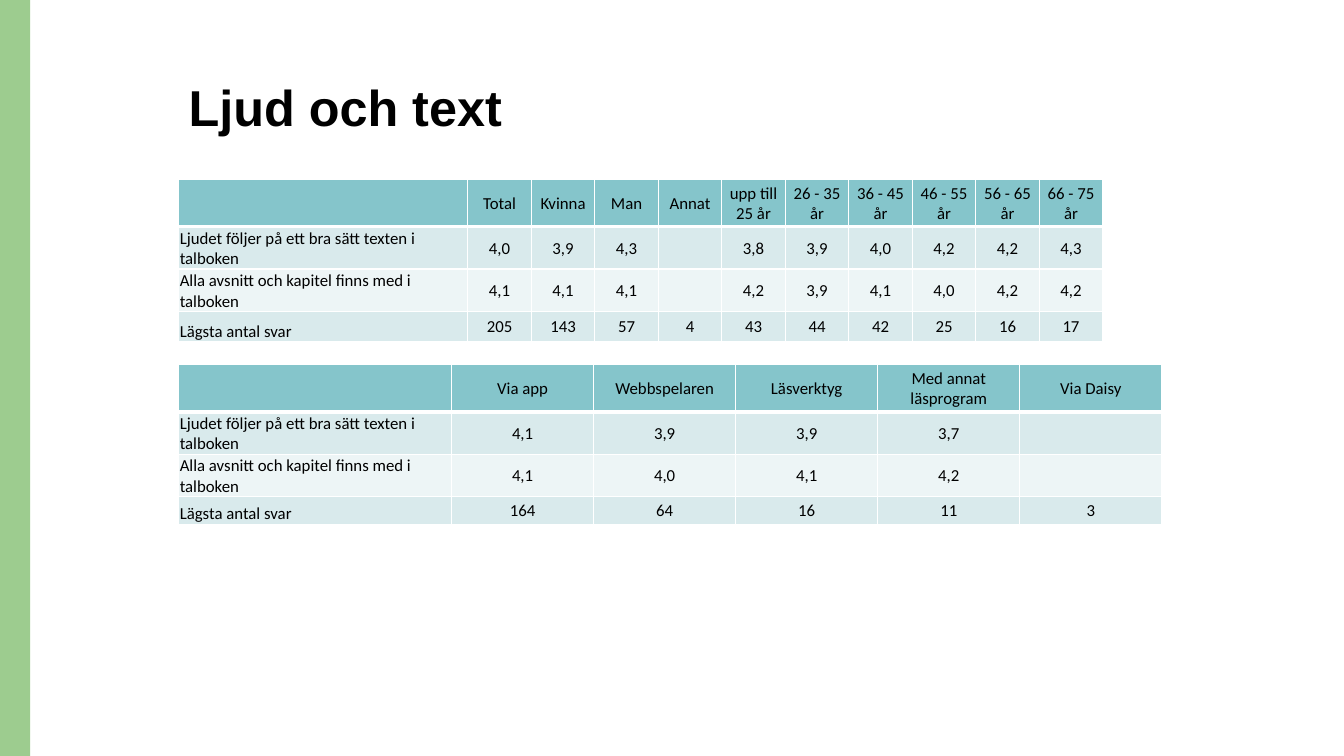
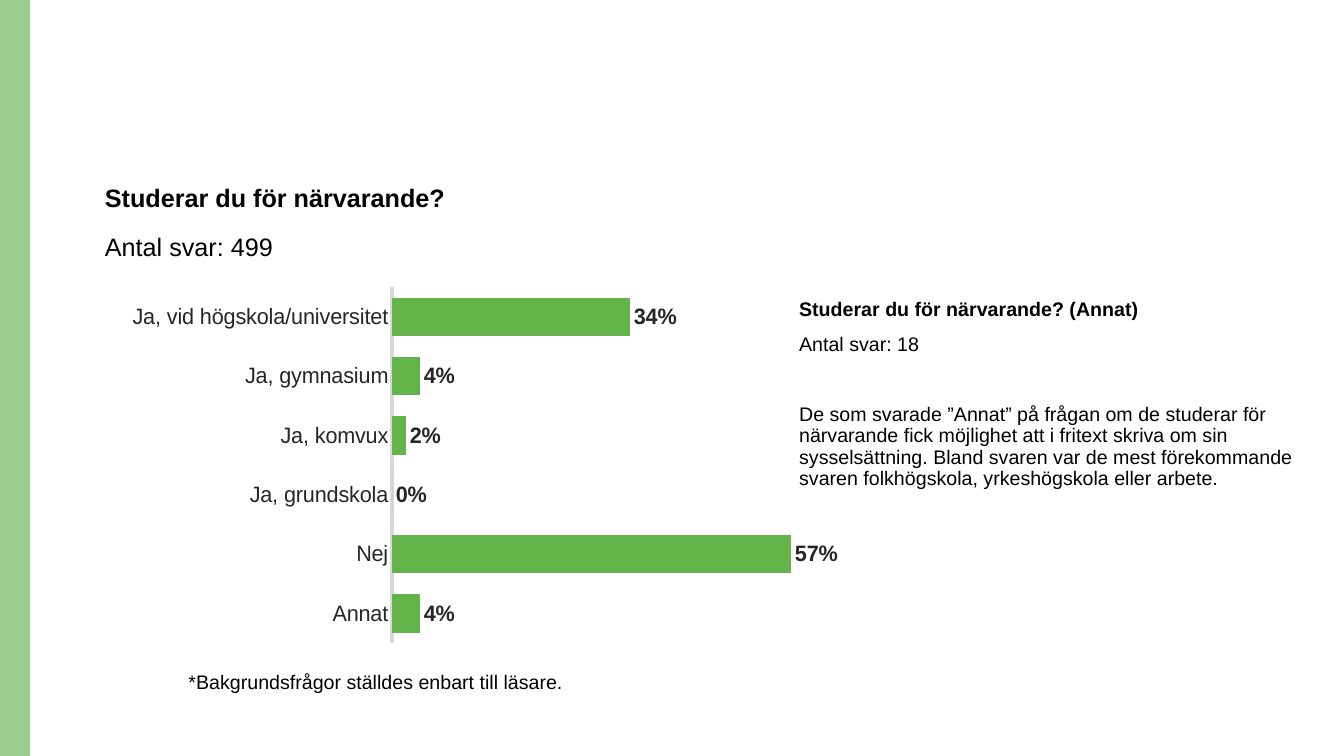
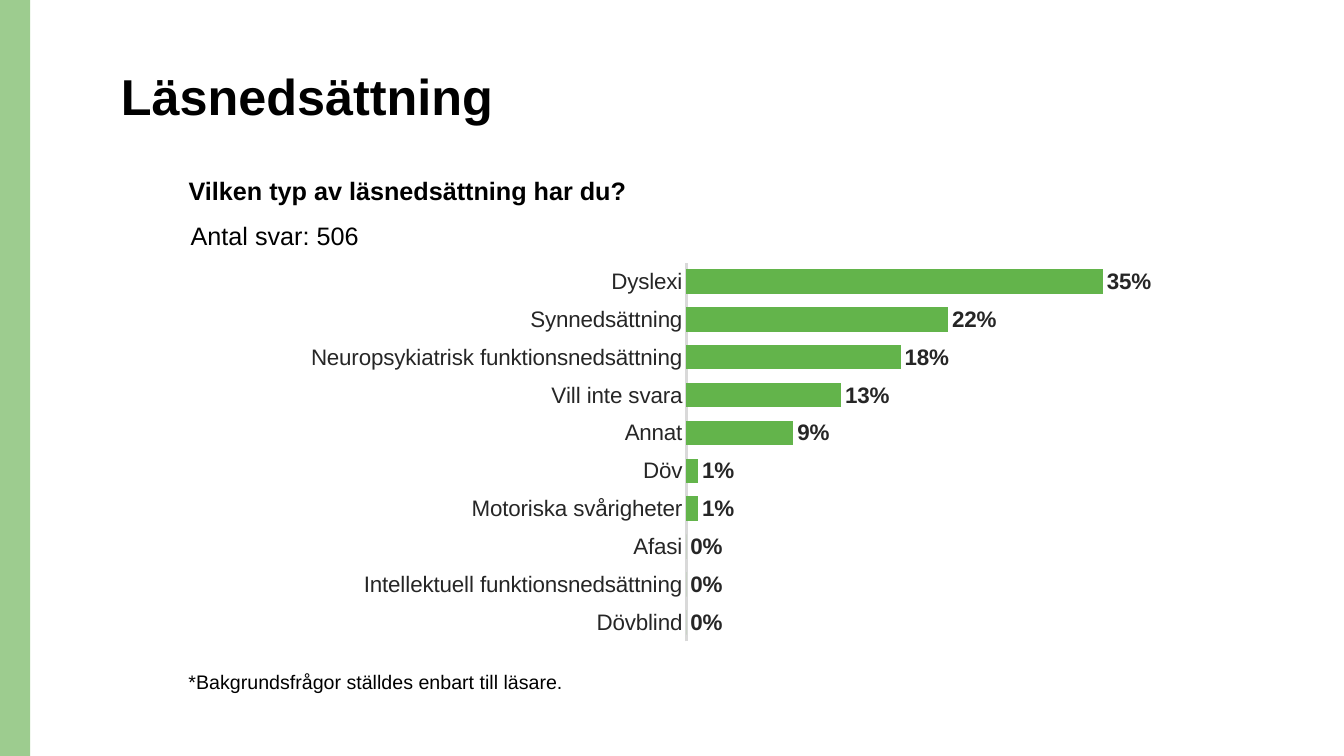
from dataclasses import dataclass

from lxml import etree
from pptx import Presentation
from pptx.chart.data import CategoryChartData
from pptx.dml.color import RGBColor
from pptx.enum.chart import XL_CHART_TYPE, XL_LABEL_POSITION, XL_TICK_MARK
from pptx.enum.shapes import MSO_SHAPE
from pptx.enum.text import MSO_ANCHOR, MSO_AUTO_SIZE, PP_ALIGN
from pptx.oxml import parse_xml
from pptx.oxml.ns import nsdecls, qn
from pptx.util import Cm, Pt

LEFT, CENTER = PP_ALIGN.LEFT, PP_ALIGN.CENTER
TOP, MIDDLE, BOTTOM = MSO_ANCHOR.TOP, MSO_ANCHOR.MIDDLE, MSO_ANCHOR.BOTTOM
BAR_CLUSTERED = XL_CHART_TYPE.BAR_CLUSTERED
OUTSIDE_END = XL_LABEL_POSITION.OUTSIDE_END
NO_TICK = XL_TICK_MARK.NONE
TITLE_ONLY, TWO_CONTENT = 5, 3


@dataclass(frozen=True)
class Theme:
    text: RGBColor = RGBColor(0x00, 0x00, 0x00)
    chart_text: RGBColor = RGBColor(0x26, 0x26, 0x26)
    band: RGBColor = RGBColor(0x9D, 0xCC, 0x8F)
    bar: RGBColor = RGBColor(0x63, 0xB4, 0x4B)
    axis: RGBColor = RGBColor(0xD9, 0xD9, 0xD9)
    header_row: RGBColor = RGBColor(0x85, 0xC5, 0xCB)
    odd_row: RGBColor = RGBColor(0xD9, 0xEA, 0xEC)
    even_row: RGBColor = RGBColor(0xED, 0xF5, 0xF6)
    cell_border: str = "FFFFFF"
    font: str = "Arial"
    table_font: str = "Calibri"
    title_size: Pt = Pt(36)
    body_size: Pt = Pt(18)
    chart_size: Pt = Pt(16)
    note_size: Pt = Pt(14)
    table_size: Pt = Pt(12)


THEME = Theme()
TITLE = {"name": THEME.font, "size": THEME.title_size, "bold": True}
QUESTION = {"name": THEME.font, "size": THEME.body_size, "bold": True}
ANSWERS = {**QUESTION, "bold": False}
NOTE = {"name": THEME.font, "size": THEME.note_size, "bold": False}
NOTE_HEADING = {**NOTE, "bold": True}
CELL = {"name": THEME.table_font, "size": THEME.table_size, "bold": False}
CHART_TEXT = {"name": THEME.font, "size": THEME.chart_size, "bold": False}
VALUE_LABEL = {**CHART_TEXT, "bold": True}


def set_font(font, style, color=THEME.text):
    for attribute, value in style.items():
        setattr(font, attribute, value)
    font.color.rgb = color


def write_text(shape, box, lines, anchor=TOP, line_spacing=0.9):
    """Place the shape; each line is (text, style, points of space before)."""
    for attribute, value in zip(("left", "top", "width", "height"), box):
        setattr(shape, attribute, Cm(value))
    frame = shape.text_frame
    frame.word_wrap = True
    frame.auto_size = MSO_AUTO_SIZE.NONE
    frame.vertical_anchor = anchor
    for index, (text, style, space_before) in enumerate(lines):
        paragraph = frame.add_paragraph() if index else frame.paragraphs[0]
        paragraph.alignment = LEFT
        paragraph.line_spacing = line_spacing
        paragraph.space_before = Pt(space_before)
        run = paragraph.add_run()
        run.text = text
        set_font(run.font, style)


presentation = Presentation()
presentation.slide_width = Cm(33.87)
presentation.slide_height = Cm(19.05)
master = presentation.slide_master

# Body text in the master has no bullet and no indent
body_level = master.element.find(".//" + qn("p:bodyStyle") + "/" + qn("a:lvl1pPr"))
body_level.set("marL", "0")
body_level.set("indent", "0")
bullet = body_level.find(qn("a:buChar"))
body_level.replace(bullet, etree.Element(qn("a:buNone")))

table_slide = presentation.slides.add_slide(presentation.slide_layouts[TITLE_ONLY])

# The green band is drawn once and moved to the master
band = table_slide.shapes.add_shape(
    MSO_SHAPE.RECTANGLE, 0, 0, Cm(0.76), presentation.slide_height)
band.shadow.inherit = False
band.fill.solid()
band.fill.fore_color.rgb = THEME.band
band.line.fill.background()
master.shapes.element.insert(2, band.element)

# Slide 1: two tables
write_text(table_slide.shapes.title, (4.5, 1.07, 30.35, 2.51),
           [("Ljud och text", TITLE, 0)], BOTTOM)

SOUND = "Ljudet följer på ett bra sätt texten i talboken"
CHAPTERS = "Alla avsnitt och kapitel finns med i talboken"
LOWEST = "Lägsta antal svar"
TABLES = [
    {"top": 4.52, "label_width": 7.29, "value_width": 1.6, "last_height": 0.76,
     "rows": [
         ["", "Total", "Kvinna", "Man", "Annat", "upp till 25 år", "26 - 35 år",
          "36 - 45 år", "46 - 55 år", "56 - 65 år", "66 - 75 år"],
         [SOUND, "4,0", "3,9", "4,3", "", "3,8", "3,9", "4,0", "4,2", "4,2", "4,3"],
         [CHAPTERS, "4,1", "4,1", "4,1", "", "4,2", "3,9", "4,1", "4,0", "4,2", "4,2"],
         [LOWEST, "205", "143", "57", "4", "43", "44", "42", "25", "16", "17"],
     ]},
    {"top": 9.19, "label_width": 6.88, "value_width": 3.58, "last_height": 0.69,
     "rows": [
         ["", "Via app", "Webbspelaren", "Läsverktyg", "Med annat läsprogram",
          "Via Daisy"],
         [SOUND, "4,1", "3,9", "3,9", "3,7", ""],
         [CHAPTERS, "4,1", "4,0", "4,1", "4,2", ""],
         [LOWEST, "164", "64", "16", "11", "3"],
     ]},
]
ROW_FILLS = [THEME.header_row, THEME.odd_row, THEME.even_row, THEME.odd_row]
CELL_MARGINS = {"margin_left": Cm(0.03), "margin_right": Cm(0.03),
                "margin_top": Cm(0.03), "margin_bottom": 0}

for content in TABLES:
    rows = content["rows"]
    widths = [content["label_width"]] + [content["value_width"]] * (len(rows[0]) - 1)
    heights = [1.19, 1.07, 1.07, content["last_height"]]
    table = table_slide.shapes.add_table(
        len(rows), len(widths), Cm(4.5), Cm(content["top"]),
        Cm(sum(widths)), Cm(sum(heights))).table
    for column, width in zip(table.columns, widths):
        column.width = Cm(width)
    for row, height in zip(table.rows, heights):
        row.height = Cm(height)
    for row_index, texts in enumerate(rows):
        for column_index, text in enumerate(texts):
            cell = table.cell(row_index, column_index)
            for attribute, value in CELL_MARGINS.items():
                setattr(cell, attribute, value)
            is_label = column_index == 0
            cell.vertical_anchor = BOTTOM if is_label else MIDDLE
            if text:
                paragraph = cell.text_frame.paragraphs[0]
                paragraph.alignment = LEFT if is_label else CENTER
                run = paragraph.add_run()
                run.text = text
                set_font(run.font, CELL)
            properties = cell._tc.get_or_add_tcPr()
            for side in ("lnL", "lnR", "lnT", "lnB"):
                header_edge = (row_index, side) in ((0, "lnB"), (1, "lnT"))
                width = Pt(3 if header_edge and row_index == 0 else 1)
                properties.append(parse_xml(
                    f'<a:{side} {nsdecls("a")} w="{width}"><a:solidFill>'
                    f'<a:srgbClr val="{THEME.cell_border}"/></a:solidFill></a:{side}>'))
            cell.fill.solid()
            cell.fill.fore_color.rgb = ROW_FILLS[row_index]

# Slides 2 and 3: a question with a bar chart
CHART_SLIDES = [
    {"title": None,
     "question": ("Studerar du för närvarande?", (2.39, 4.55, 14.33, 2.29)),
     "answers": ("Antal svar: 499", (2.39, 5.79, 11.63, 0.99)),
     "chart_box": (2.31, 6.83, 18.8, 9.42),
     "plot": {"x": 0.417, "y": 0.043, "w": 0.583, "h": 0.957},
     "maximum": 0.6,
     "values": {"Ja, vid högskola/universitet": 0.34, "Ja, gymnasium": 0.04,
                "Ja, komvux": 0.02, "Ja, grundskola": 0, "Nej": 0.57,
                "Annat": 0.04},
     "comment": [
         ("Studerar du för närvarande? (Annat)", NOTE_HEADING, 0),
         ("Antal svar: 18", NOTE, 10),
         ("De som svarade ”Annat” på frågan om de studerar för närvarande fick "
          "möjlighet att i fritext skriva om sin sysselsättning. Bland svaren var "
          "de mest förekommande svaren folkhögskola, yrkeshögskola eller arbete.",
          NOTE, 35)]},
    {"title": "Läsnedsättning",
     "question": ("Vilken typ av läsnedsättning har du?", (4.5, 4.37, 14.33, 2.29)),
     "answers": ("Antal svar: 506", (4.55, 5.51, 11.63, 0.94)),
     "chart_box": (6.15, 6.45, 23.62, 9.83),
     "plot": {"x": 0.472, "y": 0.017, "w": 0.508, "h": 0.971},
     "maximum": 0.4,
     "values": {"Dyslexi": 0.35, "Synnedsättning": 0.22,
                "Neuropsykiatrisk funktionsnedsättning": 0.18,
                "Vill inte svara": 0.13, "Annat": 0.09, "Döv": 0.01,
                "Motoriska svårigheter": 0.01, "Afasi": 0,
                "Intellektuell funktionsnedsättning": 0, "Dövblind": 0},
     "comment": []},
]

for content in CHART_SLIDES:
    slide = presentation.slides.add_slide(presentation.slide_layouts[TWO_CONTENT])
    title, question, answers = slide.placeholders
    if content["title"]:
        write_text(title, (2.79, 0.81, 30.35, 2.51),
                   [(content["title"], TITLE, 0)], BOTTOM)
    else:
        slide.shapes.element.remove(title.element)
    for placeholder, key, style in ((question, "question", QUESTION),
                                    (answers, "answers", ANSWERS)):
        text, box = content[key]
        write_text(placeholder, box, [(text, style, 0)])

    chart_data = CategoryChartData(number_format="0%")
    chart_data.categories = list(content["values"])
    chart_data.add_series("Series 1", list(content["values"].values()))
    chart = slide.shapes.add_chart(
        BAR_CLUSTERED, *map(Cm, content["chart_box"]), chart_data).chart
    chart.has_title = False
    chart.has_legend = False
    set_font(chart.font, CHART_TEXT, THEME.chart_text)

    category_axis = chart.category_axis
    category_axis.reverse_order = True
    category_axis.major_tick_mark = NO_TICK
    category_axis.minor_tick_mark = NO_TICK
    category_axis.has_major_gridlines = False
    category_axis.format.line.color.rgb = THEME.axis
    category_axis.format.line.width = Pt(2.5)
    set_font(category_axis.tick_labels.font, CHART_TEXT, THEME.chart_text)

    value_axis = chart.value_axis
    value_axis.visible = False
    value_axis.has_major_gridlines = False
    value_axis.minimum_scale = 0
    value_axis.maximum_scale = content["maximum"]

    plot = chart.plots[0]
    plot.gap_width = 55
    plot.vary_by_categories = False
    bars = plot.series[0]
    bars.format.fill.solid()
    bars.format.fill.fore_color.rgb = THEME.bar
    labels = bars.data_labels
    labels.show_value = True
    labels.position = OUTSIDE_END
    labels.number_format = "0%"
    labels.number_format_is_linked = False
    set_font(labels.font, VALUE_LABEL, THEME.chart_text)

    plot_area = chart.element.find(".//" + qn("c:plotArea"))
    for old_layout in plot_area.findall(qn("c:layout")):
        plot_area.remove(old_layout)
    modes = '<c:xMode val="edge"/><c:yMode val="edge"/>'
    sizes = "".join(f'<c:{key} val="{value}"/>' for key, value in content["plot"].items())
    plot_area.insert(0, parse_xml(
        f'<c:layout {nsdecls("c")}><c:manualLayout><c:layoutTarget val="inner"/>'
        f'{modes}{sizes}</c:manualLayout></c:layout>'))

    if content["comment"]:
        comment = slide.shapes.add_textbox(0, 0, 0, 0)
        write_text(comment, (19.89, 7.42, 13.28, 8.89), content["comment"])
    footnote = slide.shapes.add_textbox(0, 0, 0, 0)
    write_text(footnote, (4.5, 16.76, 9.98, 0.86),
               [("*Bakgrundsfrågor ställdes enbart till läsare.", NOTE, 0)],
               line_spacing=1)
    footnote.text_frame.word_wrap = False

presentation.save("out.pptx")
